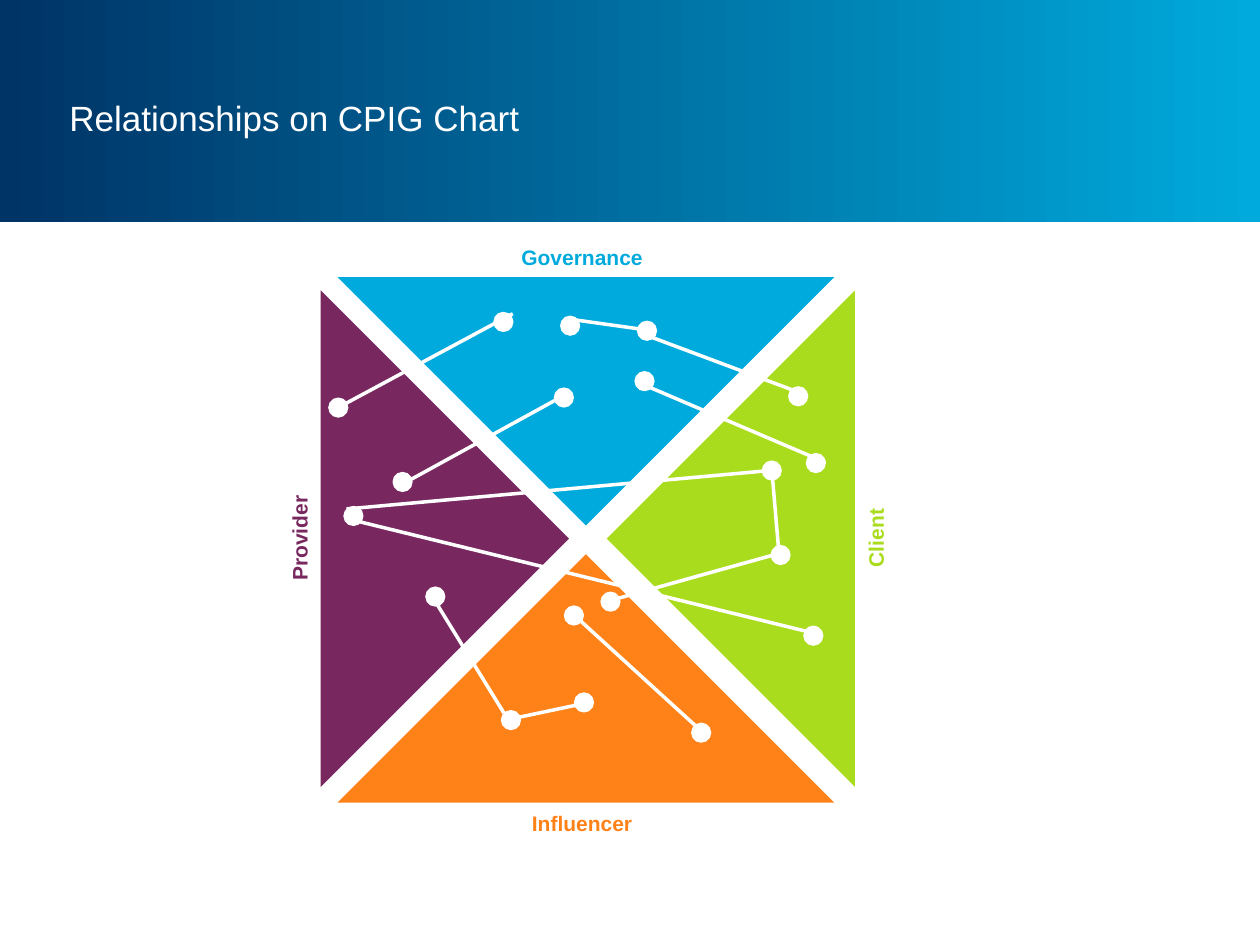
"""Build the slide that maps relationships across the four CPIG quadrants."""
from lxml.etree import SubElement
from pptx import Presentation
from pptx.dml.color import RGBColor
from pptx.enum.shapes import MSO_CONNECTOR as Connector, MSO_SHAPE as Shape
from pptx.enum.text import MSO_ANCHOR as Anchor, PP_ALIGN as Align
from pptx.oxml.ns import qn
from pptx.util import Inches, Pt

deck = Presentation()
deck.slide_width, deck.slide_height = Inches(10), Inches(7.5)
page = deck.slides.add_slide(deck.slide_layouts[5])
CELL = deck.slide_width // 1000
WHITE = "FFFFFF"


def paint(target, color):
    """Give a fill, line or font colour format a solid hex colour."""
    if hasattr(target, "solid"):
        target.solid()
        target = target.fore_color
    target.rgb = RGBColor.from_string(color)


def write(box, text, size, color, bold, align):
    """Put one formatted run into the first paragraph of a box."""
    para = box.text_frame.paragraphs[0]
    para.alignment = align
    span = para.add_run()
    span.text = text
    span.font.name, span.font.size, span.font.bold = "Arial", Pt(size), bold
    paint(span.font.color, color)


band = page.shapes.add_shape(Shape.RECTANGLE, 0, 0, deck.slide_width, 176 * CELL)
band.shadow.inherit = False
band.line.fill.background()
band.fill.gradient()
band.fill.gradient_angle = 0
for stop, position, color in zip(band.fill.gradient_stops, (0, 1), ("003366", "00AADC")):
    stop.position = position
    paint(stop.color, color)

title = page.shapes.title
title.left, title.top, title.width, title.height = (n * CELL for n in (51, 30, 748, 126))
frame = title.text_frame
frame.word_wrap = True
frame.vertical_anchor = Anchor.MIDDLE
frame.margin_left = frame.margin_right = frame.margin_top = frame.margin_bottom = 4 * CELL
write(title, "Relationships on CPIG Chart", 20, WHITE, False, Align.LEFT)
title.element.getparent().append(title.element)

BASE, RISE = 394, 197
LABEL_WIDTH, LABEL_HEIGHT = 157, 30
quadrants = [
    ("Governance", "00AADC", (465, 318.5), 180, (462, 204), 0),
    ("Influencer", "FF8219", (465, 538.5), 0, (462, 653), 0),
    ("Client", "AADC1E", (580, 427.5), 270, (695, 427), 270),
    ("Provider", "78285F", (353, 427.5), 90, (237.5, 427), 270),
]
for name, color, (x, y), turn, (label_x, label_y), label_turn in quadrants:
    triangle = page.shapes.add_shape(
        Shape.ISOSCELES_TRIANGLE, int((x - BASE / 2) * CELL), int((y - RISE / 2) * CELL),
        BASE * CELL, RISE * CELL)
    triangle.rotation = turn
    triangle.shadow.inherit = False
    triangle.line.fill.background()
    paint(triangle.fill, color)

    label = page.shapes.add_textbox(
        int((label_x - LABEL_WIDTH / 2) * CELL), int((label_y - LABEL_HEIGHT / 2) * CELL),
        LABEL_WIDTH * CELL, LABEL_HEIGHT * CELL)
    label.rotation = label_turn
    label.text_frame.word_wrap = True
    write(label, name, 12, color, True, Align.CENTER)

relationships = [
    (407, 249, 273, 321), (641, 314, 510, 265), (514, 262, 457, 254),
    (605, 374, 275, 404), (451, 312, 318, 385), (652, 504, 285, 414),
    (612, 366, 619, 448), (470, 557, 399, 572), (461, 493, 552, 576),
    (400, 566, 341, 470), (612, 441, 483, 477), (510, 305, 655, 367),
]
for ends in relationships:
    link = page.shapes.add_connector(Connector.STRAIGHT, *(n * CELL for n in ends))
    link.line.width = Pt(2)
    paint(link.line.fill, WHITE)
    SubElement(link.element.spPr, qn("a:effectLst"))

DOT = 15
people = [
    (261, 316), (392, 248), (445, 251), (312, 375), (273, 402), (605, 366),
    (338, 466), (612, 433), (398, 564), (456, 550), (440, 308), (626, 307),
    (549, 574), (506, 255), (640, 360), (504, 295), (477, 470), (448, 481),
    (638, 497),
]
for left, top in people:
    dot = page.shapes.add_shape(Shape.OVAL, left * CELL, top * CELL, DOT * CELL, DOT * CELL)
    dot.shadow.inherit = False
    dot.line.width = Pt(0.75)
    paint(dot.fill, WHITE)
    paint(dot.line.fill, WHITE)

deck.save("out.pptx")
